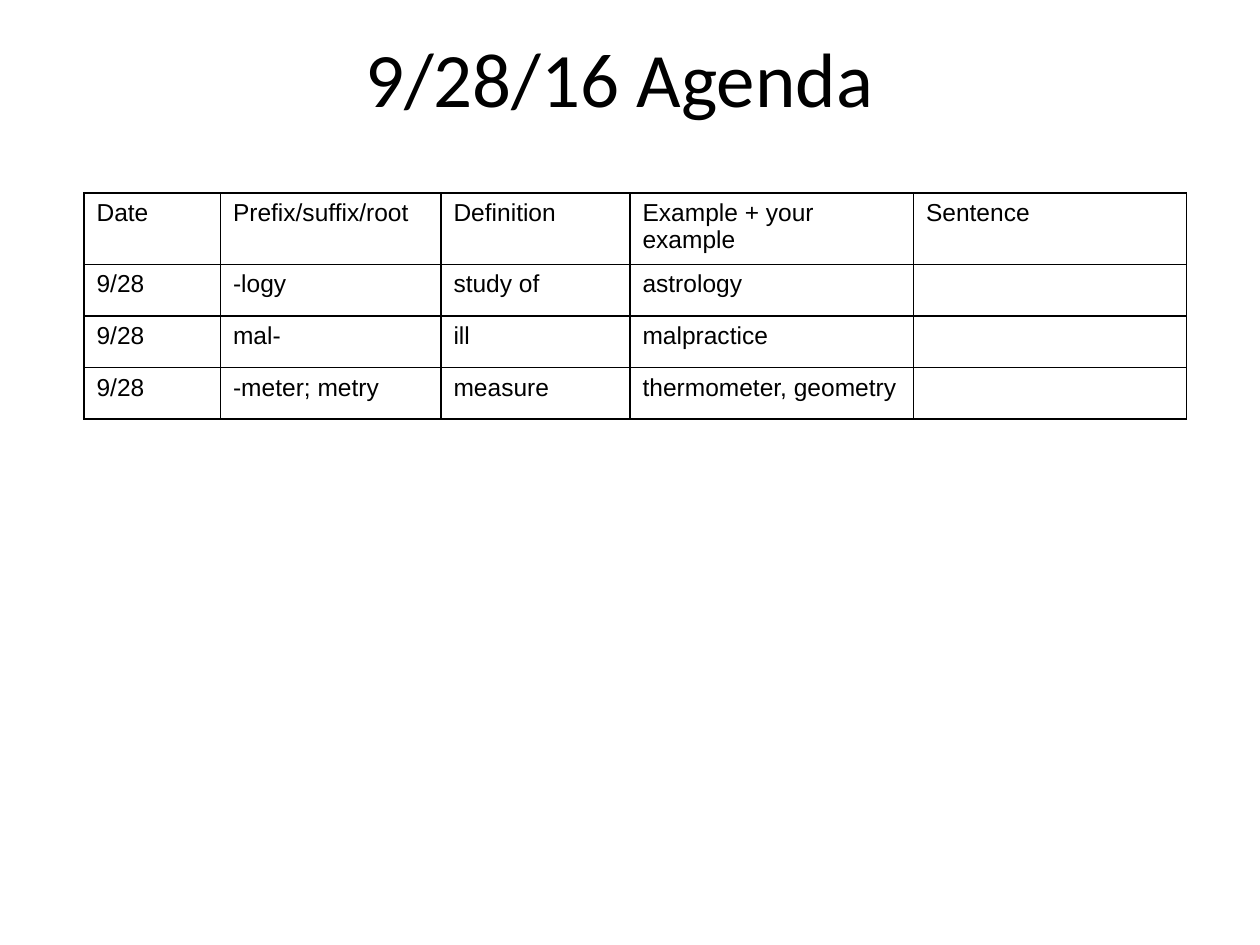
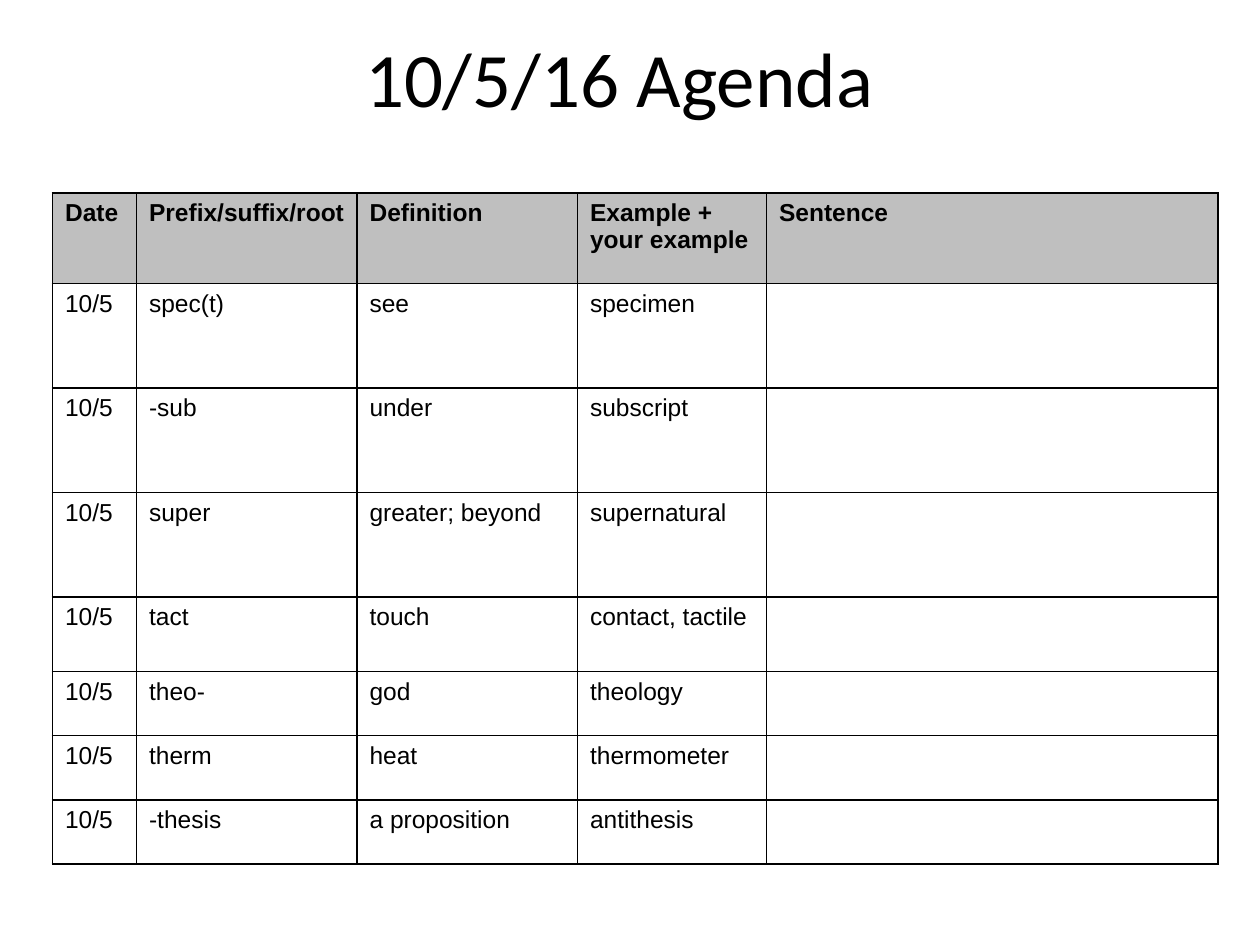
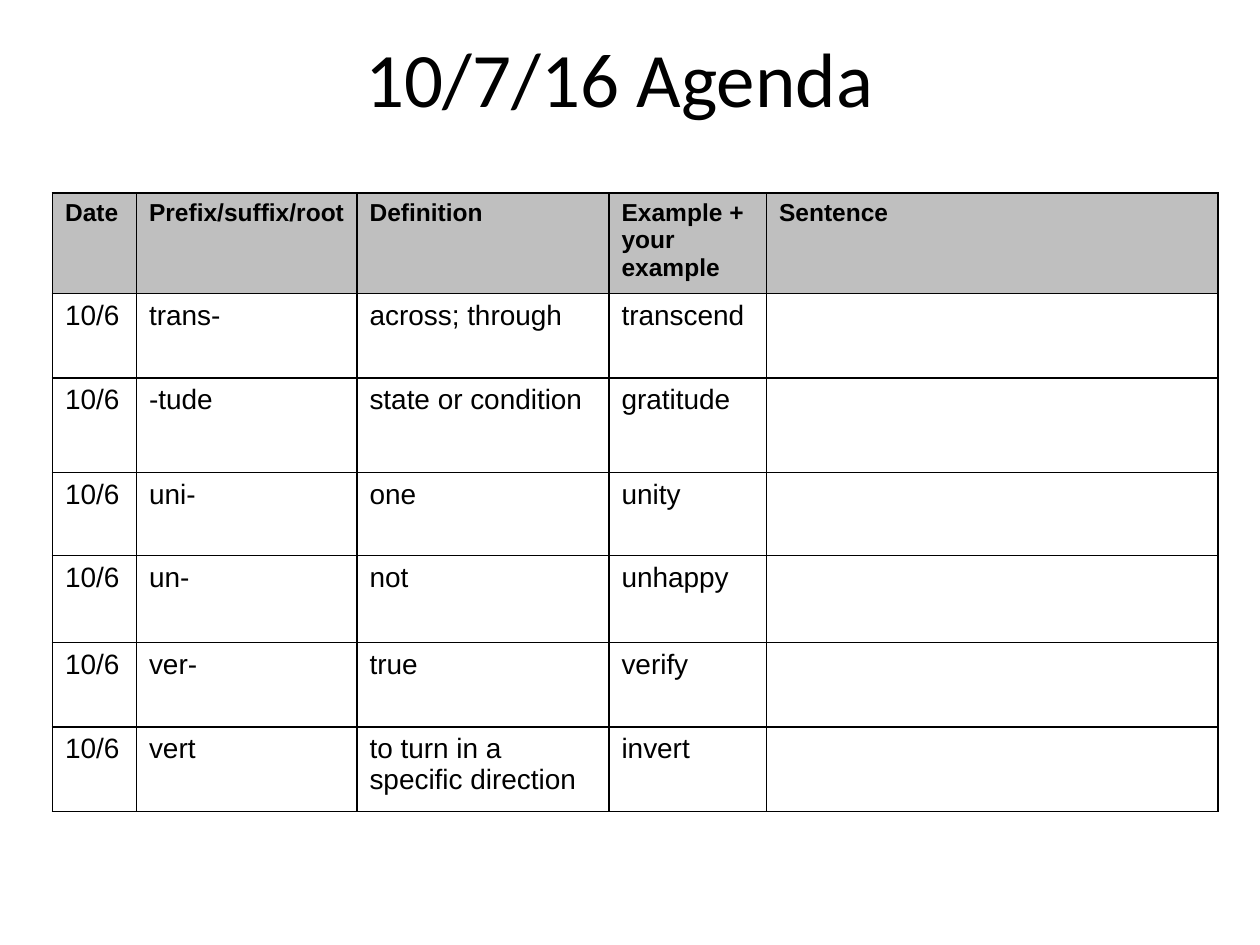
from dataclasses import dataclass

from lxml import etree
from pptx import Presentation
from pptx.dml.color import RGBColor
from pptx.enum.text import MSO_ANCHOR, PP_ALIGN
from pptx.oxml.ns import qn
from pptx.util import Inches, Pt

CENTER = PP_ALIGN.CENTER
LEFT = PP_ALIGN.LEFT
MIDDLE = MSO_ANCHOR.MIDDLE

SLIDE_WIDTH = Inches(10)
SLIDE_HEIGHT = Inches(7.5)
GRID_COLUMNS = 120
GRID_ROWS = 750
BLANK_LAYOUT = 6


@dataclass(frozen=True)
class Theme:
    ink: str = "000000"
    header_fill: str = "BFBFBF"
    title_font: str = "Calibri"
    body_font: str = "Arial"
    title_size: int = 44
    body_size: int = 14
    large_body_size: int = 16
    border_width: int = 1


THEME = Theme()
TITLE_BOX = (8, 30, 102, 61)
TABLE_TOP = 153
HEADINGS = ("Date", "Prefix/suffix/root", "Definition",
            "Example + your example", "Sentence")

AGENDAS = (
    dict(
        title="9/28/16 Agenda", date="9/28", left=8,
        columns=(13, 21, 18, 27, 26), rows=(54, 41, 41, 41),
        shaded_header=False, body_size=THEME.body_size,
        words=(
            ("-logy", "study of", "astrology"),
            ("mal-", "ill", "malpractice"),
            ("-meter; metry", "measure", "thermometer, geometry"),
        ),
    ),
    dict(
        title="10/5/16 Agenda", date="10/5", left=5,
        columns=(8, 21, 21, 18, 43), rows=(72, 83, 83, 83, 59, 51, 51, 51),
        shaded_header=True, body_size=THEME.body_size,
        words=(
            ("spec(t)", "see", "specimen"),
            ("-sub", "under", "subscript"),
            ("super", "greater; beyond", "supernatural"),
            ("tact", "touch", "contact, tactile"),
            ("theo-", "god", "theology"),
            ("therm", "heat", "thermometer"),
            ("-thesis", "a proposition", "antithesis"),
        ),
    ),
    dict(
        title="10/7/16 Agenda", date="10/6", left=5,
        columns=(8, 21, 24, 15, 43), rows=(76, 67, 75, 66, 69, 67, 67),
        shaded_header=True, body_size=THEME.large_body_size,
        words=(
            ("trans-", "across; through", "transcend"),
            ("-tude", "state or condition", "gratitude"),
            ("uni-", "one", "unity"),
            ("un-", "not", "unhappy"),
            ("ver-", "true", "verify"),
            ("vert", "to turn in a specific direction", "invert"),
        ),
    ),
)


def across(columns):
    return round(SLIDE_WIDTH * columns / GRID_COLUMNS)


def down(rows):
    return round(SLIDE_HEIGHT * rows / GRID_ROWS)


def write_text(text_frame, text, *, font, size, color, bold=False, align=LEFT):
    paragraph = text_frame.paragraphs[0]
    paragraph.alignment = align
    run = paragraph.add_run()
    run.text = text
    run.font.name = font
    run.font.size = Pt(size)
    run.font.bold = bold
    run.font.color.rgb = RGBColor.from_string(color)


def add_borders(cell, color, width):
    """Draw all four sides; call before setting the fill, which must follow."""
    properties = cell._tc.get_or_add_tcPr()
    for side in ("a:lnL", "a:lnR", "a:lnT", "a:lnB"):
        line = etree.SubElement(properties, qn(side), w=str(Pt(width)))
        fill = etree.SubElement(line, qn("a:solidFill"))
        etree.SubElement(fill, qn("a:srgbClr"), val=color)


class AgendaDeck:
    def __init__(self, theme):
        self.theme = theme
        self.presentation = Presentation()
        self.presentation.slide_width = SLIDE_WIDTH
        self.presentation.slide_height = SLIDE_HEIGHT
        self.slide = None

    def add_slide(self):
        layout = self.presentation.slide_layouts[BLANK_LAYOUT]
        self.slide = self.presentation.slides.add_slide(layout)

    def add_title(self, text):
        left, top, width, height = TITLE_BOX
        shape = self.slide.shapes.add_textbox(
            across(left), down(top), across(width), down(height))
        shape.text_frame.word_wrap = True
        shape.text_frame.vertical_anchor = MIDDLE
        write_text(shape.text_frame, text, font=self.theme.title_font,
                   size=self.theme.title_size, color=self.theme.ink, align=CENTER)

    def add_cell(self, cell, text, *, size, bold=False, fill=None):
        add_borders(cell, self.theme.ink, self.theme.border_width)
        if fill:
            cell.fill.solid()
            cell.fill.fore_color.rgb = RGBColor.from_string(fill)
        else:
            cell.fill.background()
        if text:
            write_text(cell.text_frame, text, font=self.theme.body_font,
                       size=size, color=self.theme.ink, bold=bold)

    def add_word_table(self, date, words, left, columns, rows, shaded_header, body_size):
        table = self.slide.shapes.add_table(
            len(rows), len(columns), across(left), down(TABLE_TOP),
            across(sum(columns)), down(sum(rows))).table
        table.first_row = table.horz_banding = False
        for column, width in zip(table.columns, columns):
            column.width = across(width)
        for row, height in zip(table.rows, rows):
            row.height = down(height)

        header_fill = self.theme.header_fill if shaded_header else None
        for cell, heading in zip(table.rows[0].cells, HEADINGS):
            self.add_cell(cell, heading, size=self.theme.body_size,
                          bold=shaded_header, fill=header_fill)
        for row_index, entry in enumerate(words, start=1):
            for cell, text in zip(table.rows[row_index].cells, (date, *entry, "")):
                self.add_cell(cell, text, size=body_size)


def main():
    deck = AgendaDeck(THEME)
    for agenda in AGENDAS:
        table_options = dict(agenda)
        deck.add_slide()
        deck.add_title(table_options.pop("title"))
        deck.add_word_table(**table_options)
    deck.presentation.save("out.pptx")


if __name__ == "__main__":
    main()
